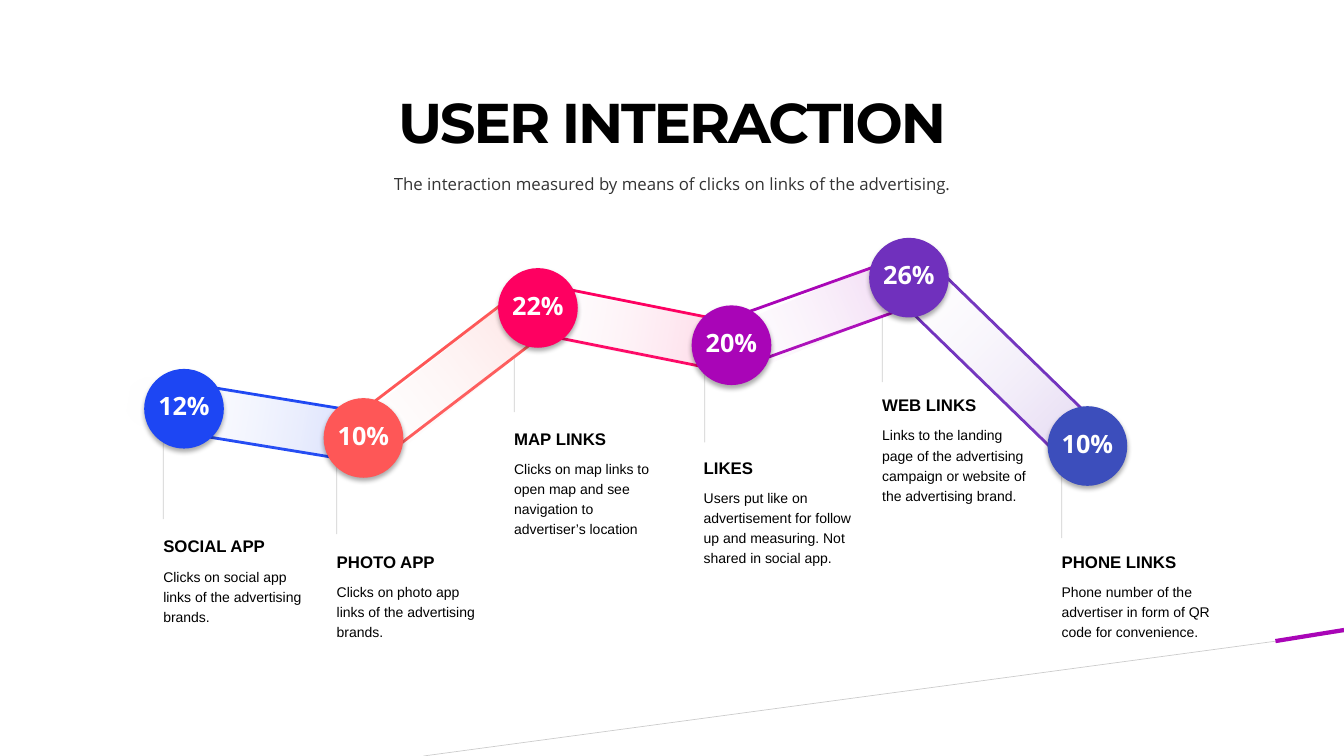
from pptx import Presentation
from pptx.dml.color import RGBColor
from pptx.enum.shapes import MSO_CONNECTOR, MSO_SHAPE
from pptx.enum.text import MSO_ANCHOR, MSO_AUTO_SIZE, PP_ALIGN
from pptx.oxml import parse_xml
from pptx.oxml.ns import nsdecls, qn
from pptx.util import Inches, Pt


def paint(fill, color, opacity=100):
    fill.solid()
    fill.fore_color.rgb = RGBColor.from_string(color)
    if opacity < 100:
        tint = fill._xPr.find(qn("a:solidFill"))[0]
        tint.append(parse_xml(f'<a:alpha {nsdecls("a")} val="{opacity * 1000}"/>'))


def write(para, text, size, font, color, bold, spacing, opacity=100):
    para.text = text
    para.line_spacing = spacing
    span = para.runs[0]
    span.font.size = Pt(size)
    span.font.name = font
    span.font.bold = bold
    paint(span.font.fill, color, opacity)
    return span


deck = Presentation()
deck.slide_width = Inches(13.33)
deck.slide_height = Inches(7.5)
page = deck.slides.add_slide(deck.slide_layouts[6])

channels = [
    ("12%", "1D46F3", 1.43, 3.66, 1.62, 5.23, 1.47, 1.01, "SOCIAL APP",
     "Clicks on social app links of the advertising brands."),
    ("10%", "FE5757", 3.21, 3.95, 3.34, 5.38, 1.47, 1.01, "PHOTO APP",
     "Clicks on photo app links of the advertising brands."),
    ("22%", "FE0061", 4.94, 2.66, 5.1, 4.16, 1.47, 1.22, "MAP LINKS",
     "Clicks on map links to open map and see navigation to advertiser’s location"),
    ("20%", "A905B7", 6.86, 3.03, 6.98, 4.45, 1.53, 1.22, "LIKES",
     "Users put like on advertisement for follow up and measuring. Not shared in social app."),
    ("26%", "7030BD", 8.62, 2.36, 8.75, 3.83, 1.47, 1.22, "WEB LINKS",
     "Links to the landing page of the advertising campaign or website of the advertising brand."),
    ("10%", "3C4EBC", 10.39, 4.03, 10.53, 5.38, 1.56, 1.01, "PHONE LINKS",
     "Phone number of the advertiser in form of QR code for convenience."),
]

lines = [
    (13.33, 6.27, 4.2, 7.5, "000000", 0.5, 20),
    (13.33, 6.25, 12.65, 6.36, "A905B7", 3, 100),
    (1.62, 3.83, 1.62, 5.15, "000000", 0.5, 20),
    (3.34, 4.34, 3.34, 5.3, "000000", 0.5, 20),
    (5.1, 3.13, 5.1, 4.09, "000000", 0.5, 20),
    (6.99, 3.43, 6.99, 4.39, "000000", 0.5, 20),
    (8.75, 2.83, 8.75, 3.79, "000000", 0.5, 20),
    (10.53, 4.39, 10.53, 5.34, "000000", 0.5, 20),
]
for x1, y1, x2, y2, color, width, opacity in lines:
    line = page.shapes.add_connector(
        MSO_CONNECTOR.STRAIGHT, Inches(x1), Inches(y1), Inches(x2), Inches(y2))
    line.line.width = Pt(width)
    paint(line.line.fill, color, opacity)
    line._element.spPr.append(parse_xml(f'<a:effectLst {nsdecls("a")}/>'))

title = page.shapes.add_textbox(Inches(0.83), Inches(0.79), Inches(11.67), Inches(1.12))
title_frame = title.text_frame
title_frame.word_wrap = True
title_frame.margin_left = title_frame.margin_right = title_frame.margin_bottom = 0
title_frame.margin_top = Inches(0.21)
heading = title_frame.paragraphs[0]
heading.alignment = PP_ALIGN.CENTER
span = write(heading, "USER INTERACTION", 40, "Montserrat", "000000", True, 0.8)
span.font._element.set("spc", "-150")

subtitle = page.shapes.add_textbox(Inches(1.56), Inches(1.63), Inches(10.22), Inches(0.32))
subtitle.text_frame.word_wrap = True
subtitle.text_frame.margin_left = subtitle.text_frame.margin_right = 0
subtitle.text_frame.paragraphs[0].alignment = PP_ALIGN.CENTER
write(subtitle.text_frame.paragraphs[0],
      "The interaction measured by means of clicks on links of the advertising.",
      12, "Open Sans", "000000", False, 1.2, 80)

band_height = 0.49
bands = [
    ("1D46F3", 2.47, (2.7, 4.19, 9.3), (2.46, 4.15, 9.4)),
    ("FE5757", 2.47, (4.41, 3.76, -37.4), (4.41, 3.79, -38.7)),
    ("FE0061", 2.47, (6.33, 3.26, 11.3), (6.23, 3.26, 9.9)),
    ("A905B7", 2.47, (8.16, 3.09, -19.7), (8.02, 3.17, -23.1)),
    ("7030BD", 2.6, (9.92, 3.61, 44.2), (9.78, 3.47, 44.8)),
]
for color, length, outline, glow in bands:
    for place in (outline, glow):
        x, y, angle = place
        band = page.shapes.add_shape(
            MSO_SHAPE.ROUNDED_RECTANGLE, Inches(x - length / 2),
            Inches(y - band_height / 2), Inches(length), Inches(band_height))
        band.adjustments[0] = 0.5
        band.rotation = angle
        band.shadow.inherit = False
        if place is outline:
            paint(band.fill, "FFFFFF")
            paint(band.line.fill, color)
            band.line.width = Pt(2)
        else:
            band.line.fill.background()
            band.fill.gradient()
            band.fill.gradient_angle = 0
            for stop, tone, opacity in zip(band.fill.gradient_stops, ("FFFFFF", color), (0, 20)):
                stop.color.rgb = RGBColor.from_string(tone)
                stop._gs[0].append(
                    parse_xml(f'<a:alpha {nsdecls("a")} val="{opacity * 1000}"/>'))

for share, color, left, top, text_left, text_top, width, height, name, detail in channels:
    circle = page.shapes.add_shape(
        MSO_SHAPE.OVAL, Inches(left), Inches(top), Inches(0.79), Inches(0.79))
    paint(circle.fill, color)
    circle.line.fill.background()
    circle.shadow.inherit = False
    circle._element.spPr.find(qn("a:effectLst")).append(parse_xml(
        f'<a:outerShdw {nsdecls("a")} blurRad="{Pt(3.5)}" dist="{Pt(2.2)}" dir="5400000" '
        'algn="t" rotWithShape="0"><a:srgbClr val="000000"><a:alpha val="32000"/>'
        '</a:srgbClr></a:outerShdw>'))
    frame = circle.text_frame
    frame.margin_left = frame.margin_right = frame.margin_top = frame.margin_bottom = 0
    frame.vertical_anchor = MSO_ANCHOR.MIDDLE
    frame.paragraphs[0].alignment = PP_ALIGN.CENTER
    write(frame.paragraphs[0], share, 18, "Open Sans", "FFFFFF", True, 0.8)

    box = page.shapes.add_textbox(
        Inches(text_left), Inches(text_top), Inches(width), Inches(height))
    box.text_frame.word_wrap = True
    box.text_frame.auto_size = MSO_AUTO_SIZE.SHAPE_TO_FIT_TEXT
    box.text_frame.margin_left = box.text_frame.margin_right = 0
    write(box.text_frame.paragraphs[0], name, 12, "Arial", "000000", True, 1.2)
    para = box.text_frame.add_paragraph()
    para.space_before = Pt(6)
    write(para, detail, 10, "Arial", "000000", False, 1.2)

deck.save("out.pptx")
